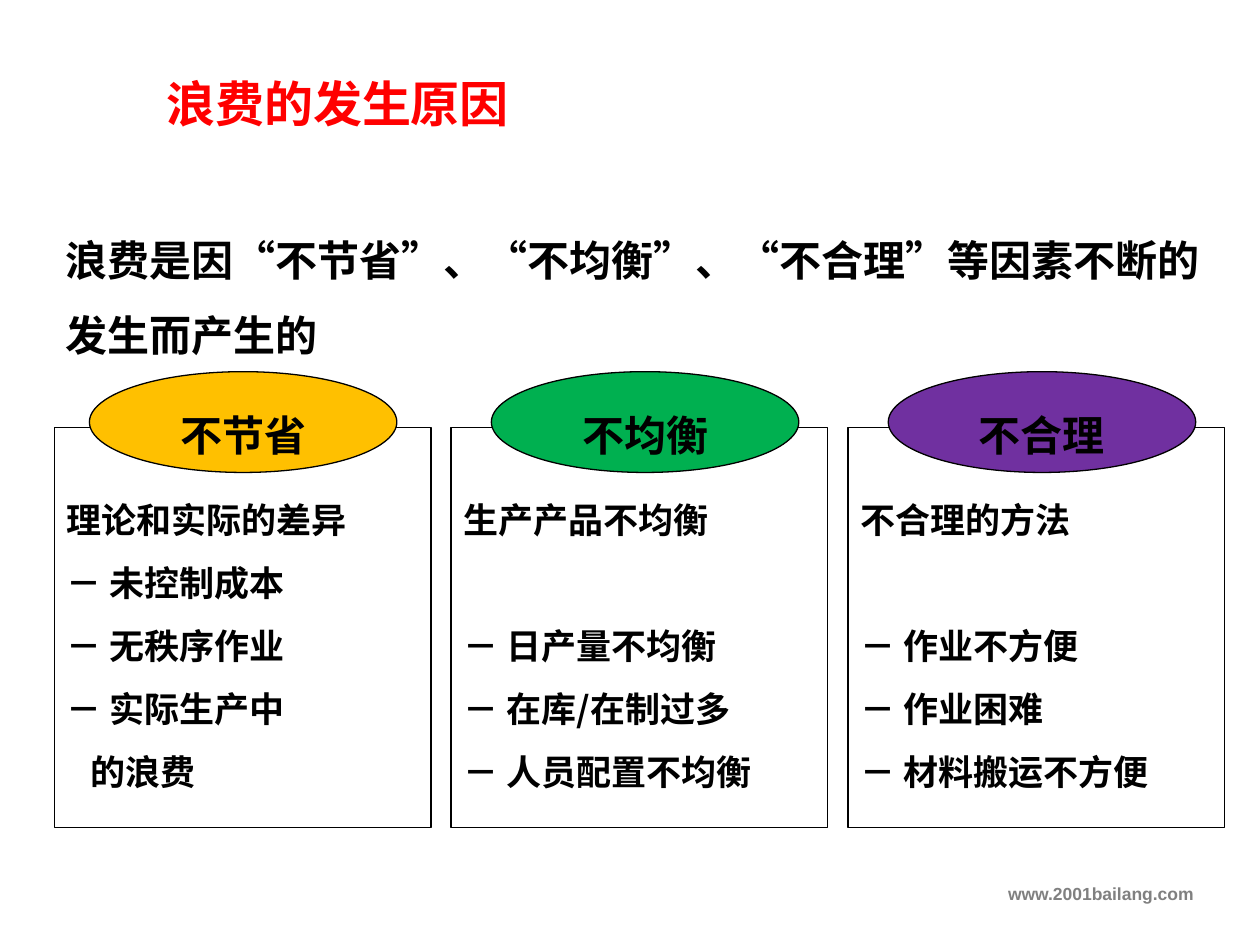
import pptx
import pptx.util
import pptx.dml.color
import pptx.enum.shapes
import pptx.enum.text
import pptx.oxml.ns
from lxml import etree

Inches = pptx.util.Inches
Pt = pptx.util.Pt
SHAPES = pptx.enum.shapes.MSO_SHAPE
ALIGN = pptx.enum.text.PP_ALIGN
ANCHOR = pptx.enum.text.MSO_ANCHOR
CJK = "Noto Sans CJK SC"

CARD_LEFT, CARD_TOP, CARD_WIDTH, CARD_HEIGHT = 0.43, 3.39, 2.99, 3.18
CARD_PITCH = 3.15
# Heading, badge colour, badge offset, topic, gap after topic (pt), causes, continuation
CARDS = [
    ("不节省", "FFC000", 0.28, "理论和实际的差异", 0,
     ["未控制成本", "无秩序作业", "实际生产中"], "的浪费"),
    ("不均衡", "00B050", 0.32, "生产产品不均衡", 36,
     ["日产量不均衡", "在库/在制过多", "人员配置不均衡"], None),
    ("不合理", "7030A0", 0.32, "不合理的方法", 36,
     ["作业不方便", "作业困难", "材料搬运不方便"], None),
]


def rgb(color):
    return pptx.dml.color.RGBColor.from_string(color)


def add_run(paragraph, text, size, color="000000", font=CJK):
    run = paragraph.add_run()
    run.text = text
    run.font.size = Pt(size)
    run.font.bold = True
    run.font.name = font
    run.font.color.rgb = rgb(color)
    east_asian = etree.SubElement(run.font._element, pptx.oxml.ns.qn("a:ea"))
    east_asian.set("typeface", font)


def setup_frame(frame, anchor=ANCHOR.TOP, top=0.05):
    frame.word_wrap = True
    frame.vertical_anchor = anchor
    frame.margin_left = frame.margin_right = Inches(0.1)
    frame.margin_top, frame.margin_bottom = Inches(top), Inches(0.05)


def outlined_shape(slide, kind, left, top, width, height, fill):
    shape = slide.shapes.add_shape(
        kind, Inches(left), Inches(top), Inches(width), Inches(height))
    shape.shadow.inherit = False
    shape.fill.solid()
    shape.fill.fore_color.rgb = rgb(fill)
    shape.line.color.rgb = rgb("000000")
    shape.line.width = Pt(0.75)
    return shape


def add_title(slide, left, top, width, height):
    title = slide.shapes.title
    title.left, title.top = Inches(left), Inches(top)
    title.width, title.height = Inches(width), Inches(height)
    setup_frame(title.text_frame)
    heading = title.text_frame.paragraphs[0]
    heading.alignment = ALIGN.LEFT
    add_run(heading, "浪费的发生原因", 28, "FF0000")


def add_text(slide, left, top, width, height, text, size, align=ALIGN.LEFT,
             spacing=1.0, **style):
    box = slide.shapes.add_textbox(
        Inches(left), Inches(top), Inches(width), Inches(height))
    setup_frame(box.text_frame)
    paragraph = box.text_frame.paragraphs[0]
    paragraph.alignment = align
    paragraph.line_spacing = spacing
    add_run(paragraph, text, size, **style)


def add_card(slide, left, top, width, height, card):
    heading, color, badge_offset, topic, gap, causes, continuation = card

    # Panel with the topic and its causes
    panel = outlined_shape(slide, SHAPES.RECTANGLE, left, top, width, height, "FFFFFF")
    frame = panel.text_frame
    setup_frame(frame, top=0.4)
    lines = [topic] + ["－ " + cause for cause in causes]
    if continuation:
        lines.append(continuation)
    for index, line in enumerate(lines):
        paragraph = frame.paragraphs[0] if index == 0 else frame.add_paragraph()
        paragraph.alignment = ALIGN.LEFT
        paragraph.line_spacing = 1.5
        if index == 1 and gap:
            paragraph.space_before = Pt(gap)
        if line == continuation:
            paragraph._p.get_or_add_pPr().set("marL", str(Inches(0.19)))
        add_run(paragraph, line, 20)

    # Oval badge over the top edge
    badge = outlined_shape(slide, SHAPES.OVAL, left + badge_offset, top - 0.44,
                           2.44, 0.8, color)
    setup_frame(badge.text_frame, ANCHOR.MIDDLE)
    label = badge.text_frame.paragraphs[0]
    label.alignment = ALIGN.CENTER
    label.line_spacing = 1.5
    add_run(label, heading, 24)


def main():
    deck = pptx.Presentation()
    deck.slide_width, deck.slide_height = Inches(10), Inches(7.5)
    slide = deck.slides.add_slide(deck.slide_layouts[5])

    add_title(slide, 1.22, 0.53, 3.47, 0.57)

    # Opening statement
    add_text(slide, 0.42, 1.61, 9.21, 1.31,
             "浪费是因“不节省”、“不均衡”、“不合理”等因素不断的发生而产生的",
             24, spacing=1.5)

    # Three causes side by side
    for column, card in enumerate(CARDS):
        add_card(slide, CARD_LEFT + column * CARD_PITCH, CARD_TOP,
                 CARD_WIDTH, CARD_HEIGHT, card)

    # Footer address
    add_text(slide, 0, 6.96, 9.57, 0.35, "www.2001bailang.com", 10,
             ALIGN.RIGHT, color="808080", font="Arial")

    deck.save("out.pptx")


if __name__ == "__main__":
    main()
